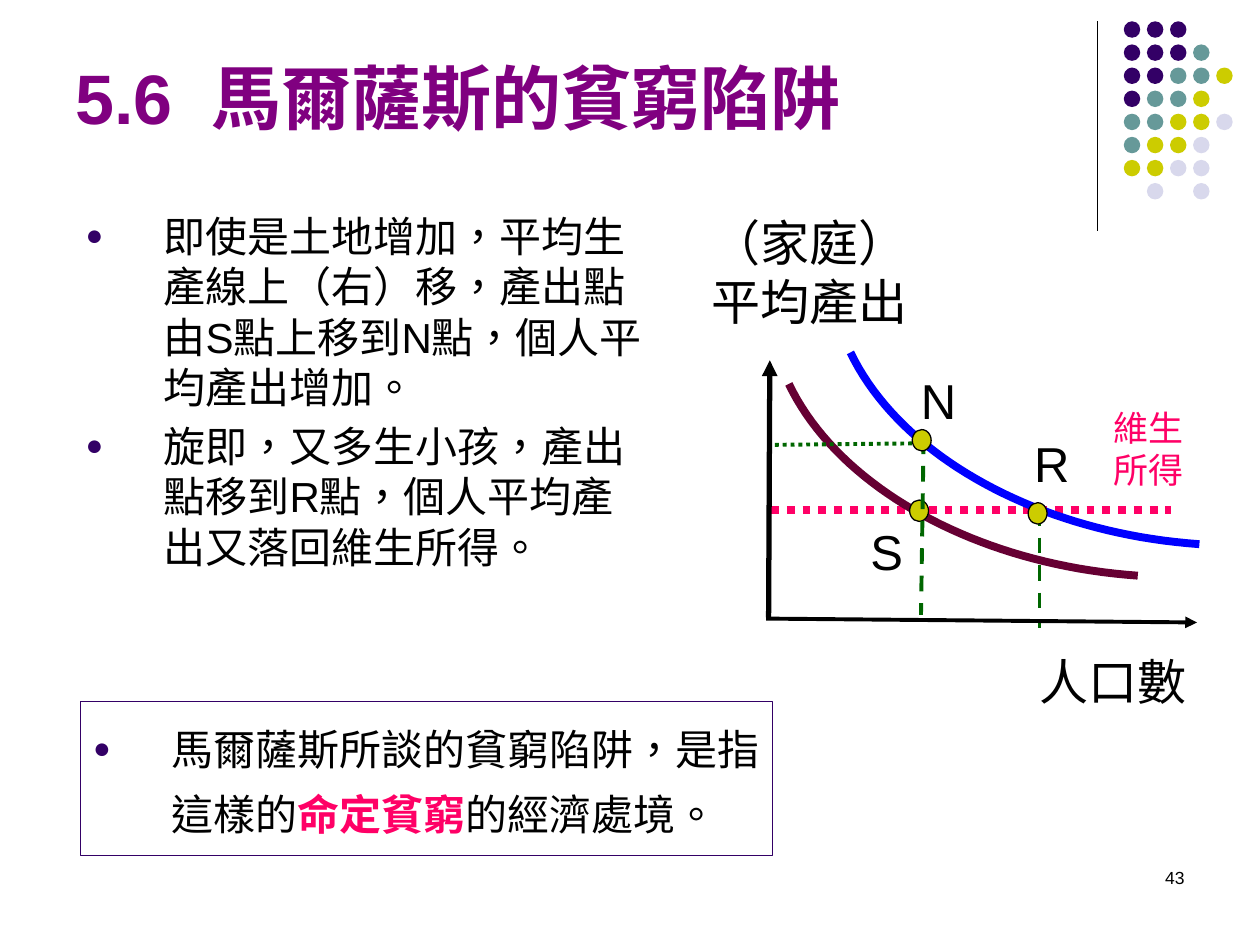
from lxml.etree import SubElement
from pptx import Presentation
from pptx.dml.color import RGBColor
from pptx.enum.dml import MSO_LINE
from pptx.enum.shapes import MSO_CONNECTOR, MSO_SHAPE
from pptx.enum.text import MSO_ANCHOR, MSO_AUTO_SIZE, PP_ALIGN
from pptx.oxml.ns import qn
from pptx.util import Pt

COLORS = {
    "black": "000000", "title": "800080", "indigo": "330066", "teal": "669999",
    "olive": "CCCC00", "lavender": "D8D8EC", "pink": "FF0066",
    "maroon": "660033", "blue": "0000FF", "green": "006600",
}
FONT = "Arial"

DOT_COLORS = {"I": "indigo", "T": "teal", "O": "olive", "L": "lavender"}
DOT_ROWS = ["III", "IIIT", "IITTO", "ITTO", "TTOOL", "TOOL", "OOLL", " L L"]
DOT_LEFT, DOT_TOP, DOT_PITCH, DOT_SIZE = 642.2, 12.2, 13.2, 9.4

TITLE = "5.6  馬爾薩斯的貧窮陷阱"
POINTS = [
    [("即使是土地增加，平均生產線上（右）移，產出點由S點上移到N點，個人平均產出增加。", "black", False)],
    [("旋即，又多生小孩，產出點移到R點，個人平均產出又落回維生所得。", "black", False)],
]
CONCLUSION = [[
    ("馬爾薩斯所談的貧窮陷阱，是指這樣的", "black", False),
    ("命定貧窮", "pink", True),
    ("的經濟處境。", "black", False),
]]
PAGE_NUMBER = "43"

LABELS = [
    (["（家庭）", "平均產出"], (399.6, 118.1, 126.7, 74.2), 28, "black"),
    (["維生", "所得"], (629.3, 229, 54.7, 55.4), 20, "pink"),
    (["S"], (490.3, 294.5, 33.1, 41), 28, "black"),
    (["N"], (519.1, 208.1, 34.6, 41), 28, "black"),
    (["R"], (583.9, 244.1, 34.6, 41), 28, "black"),
    (["人口數"], (586.8, 368.6, 98.6, 41), 28, "black"),
]

CURVE = [(0, 0), (-90.7, -6.3), (-170.6, -49.5), (-199.4, -109.6)]
CURVE_STEPS = 40
MARKER_SIZE = (10.8, 12.2)

DIAGRAM = [
    ("line", (440.6, 291.6, 668.9, 291.6), "pink", 4.5, MSO_LINE.ROUND_DOT, False),
    ("line", (439.2, 352.8, 439.9, 205.9), "black", 3, None, True),
    ("curve", (650.2, 329), "maroon"),
    ("line", (594, 291.6, 594, 358.6), "green", 2.25, MSO_LINE.DASH, False),
    ("line", (442.8, 254.2, 521.3, 253.4), "green", 2.25, MSO_LINE.ROUND_DOT, False),
    ("marker", (519.8, 285.8)),
    ("line", (437.8, 353.5, 684, 355.7), "black", 2.25, None, True),
    ("curve", (685.4, 311), "blue"),
    ("marker", (587.5, 287.3)),
    ("line", (527.8, 250.6, 526.3, 351.4), "green", 2.25, MSO_LINE.DASH, False),
    ("marker", (521.3, 245.5)),
]


def color(name):
    return RGBColor.from_string(COLORS[name])


def add_line(ends, line_color, width, dash=None, arrow=False):
    line = slide.shapes.add_connector(MSO_CONNECTOR.STRAIGHT, *map(Pt, ends))
    line.line.color.rgb = color(line_color)
    line.line.width = Pt(width)
    if dash:
        line.line.dash_style = dash
    if arrow:
        SubElement(line.line._get_or_add_ln(), qn("a:tailEnd"), type="triangle")
    SubElement(line._element.spPr, qn("a:effectLst"))


def add_ellipse(left, top, width, height, fill, outlined=False):
    ellipse = slide.shapes.add_shape(MSO_SHAPE.OVAL, *map(Pt, (left, top, width, height)))
    ellipse.shadow.inherit = False
    ellipse.fill.solid()
    ellipse.fill.fore_color.rgb = color(fill)
    if outlined:
        ellipse.line.color.rgb = color("black")
        ellipse.line.width = Pt(0.75)
    else:
        ellipse.line.fill.background()


def add_curve(origin, line_color):
    vertices = []
    for step in range(CURVE_STEPS + 1):
        t = step / CURVE_STEPS
        weights = ((1 - t) ** 3, 3 * t * (1 - t) ** 2, 3 * t * t * (1 - t), t ** 3)
        vertices.append(tuple(
            Pt(origin[axis] + sum(w * p[axis] for w, p in zip(weights, CURVE)))
            for axis in (0, 1)))
    builder = slide.shapes.build_freeform(*vertices[0])
    builder.add_line_segments(vertices[1:], close=False)
    curve = builder.convert_to_shape()
    curve.shadow.inherit = False
    curve.fill.background()
    curve.line.color.rgb = color(line_color)
    curve.line.width = Pt(4.5)


def write(frame, paragraphs, size, align=PP_ALIGN.LEFT, bulleted=False, spacing=None):
    for index, runs in enumerate(paragraphs):
        paragraph = frame.add_paragraph() if index else frame.paragraphs[0]
        paragraph.alignment = align
        if spacing:
            paragraph.line_spacing = spacing
        if bulleted:
            paragraph.space_before = Pt(size * 0.2)
            add_bullet(paragraph)
        for text, text_color, bold in runs:
            run = paragraph.add_run()
            run.text = text
            run.font.name = FONT
            run.font.size = Pt(size)
            run.font.bold = bold
            run.font.color.rgb = color(text_color)
            run._r.get_or_add_rPr().set("lang", "zh-TW")


def add_bullet(paragraph):
    properties = paragraph._p.get_or_add_pPr()
    properties.set("marL", str(Pt(44.6)))
    properties.set("indent", str(-Pt(44.6)))
    bullet_color = SubElement(properties, qn("a:buClr"))
    SubElement(bullet_color, qn("a:srgbClr"), val=COLORS["indigo"])
    SubElement(properties, qn("a:buSzPct"), val="70000")
    SubElement(properties, qn("a:buFont"), typeface=FONT)
    SubElement(properties, qn("a:buChar"), char="●")


def add_text(box, wrap=True):
    frame = slide.shapes.add_textbox(*map(Pt, box)).text_frame
    frame.word_wrap = wrap
    return frame


presentation = Presentation()
presentation.slide_width, presentation.slide_height = Pt(720), Pt(540)
slide = presentation.slides.add_slide(presentation.slide_layouts[6])

add_line((627.1, 12.2, 627.1, 131.8), "black", 0.75)
for row, keys in enumerate(DOT_ROWS):
    for column, key in enumerate(keys):
        if key in DOT_COLORS:
            add_ellipse(DOT_LEFT + column * DOT_PITCH, DOT_TOP + row * DOT_PITCH,
                        DOT_SIZE, DOT_SIZE, DOT_COLORS[key])

title = add_text((36, 9.4, 595.4, 73.4))
title.vertical_anchor = MSO_ANCHOR.BOTTOM
write(title, [[(TITLE, "title", True)]], 40)

write(add_text((41.8, 116.6, 334.8, 250.6)), POINTS, 24, bulleted=True)

conclusion = slide.shapes.add_shape(MSO_SHAPE.RECTANGLE, *map(Pt, (46.1, 401, 395.3, 87.8)))
conclusion.shadow.inherit = False
conclusion.fill.background()
conclusion.line.color.rgb = color("indigo")
conclusion.line.width = Pt(0.75)
conclusion.text_frame.word_wrap = True
conclusion.text_frame.vertical_anchor = MSO_ANCHOR.TOP
write(conclusion.text_frame, CONCLUSION, 24, bulleted=True, spacing=1.3)

for kind, place, *style in DIAGRAM:
    if kind == "line":
        add_line(place, *style)
    elif kind == "curve":
        add_curve(place, *style)
    else:
        add_ellipse(*place, *MARKER_SIZE, "olive", outlined=True)

for lines, box, size, label_color in LABELS:
    label = add_text(box, wrap=False)
    label.auto_size = MSO_AUTO_SIZE.SHAPE_TO_FIT_TEXT
    write(label, [[(line, label_color, False)] for line in lines], size)

write(add_text((516.2, 491.8, 167.8, 36)), [[(PAGE_NUMBER, "black", False)]], 10, PP_ALIGN.RIGHT)

presentation.save("out.pptx")
